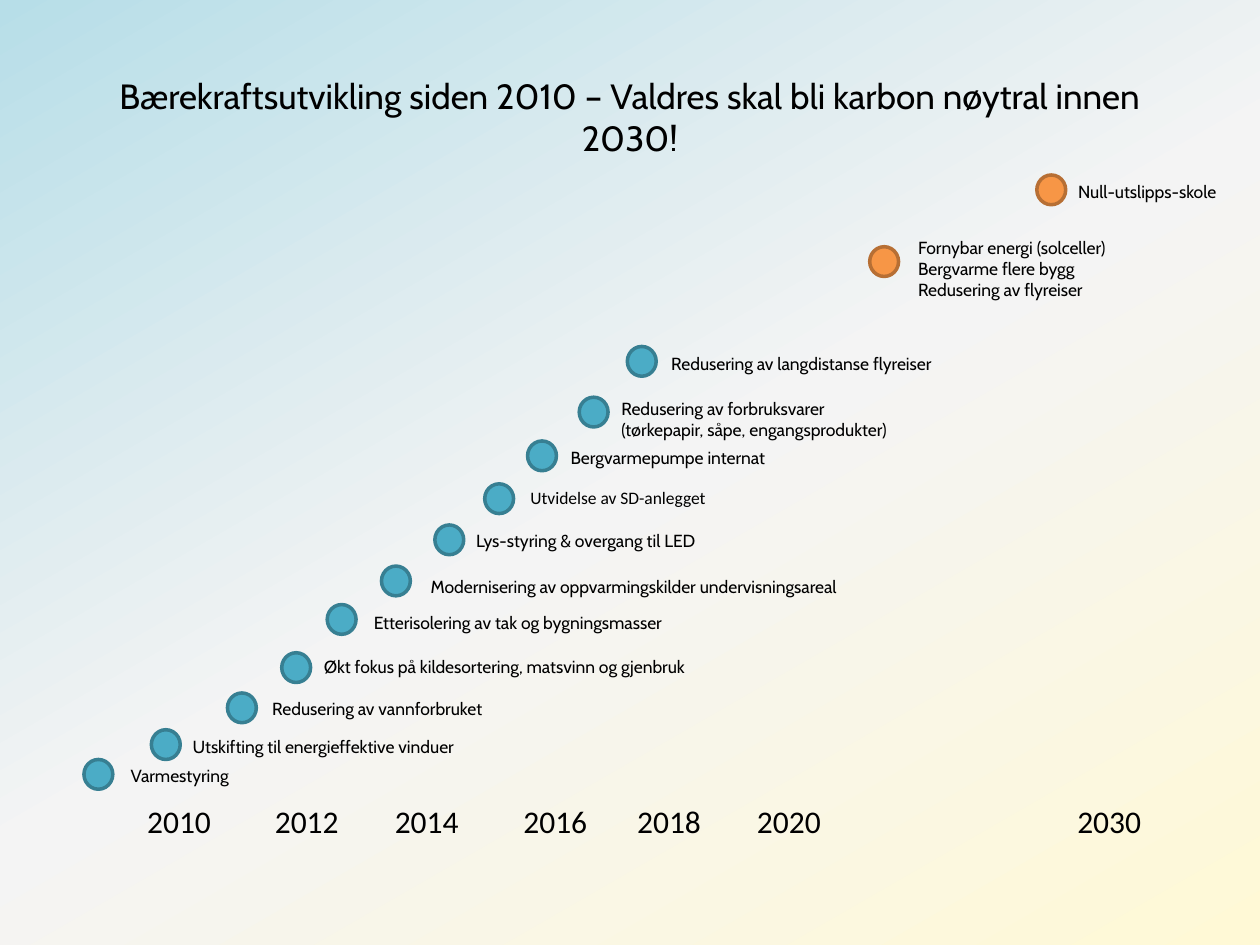
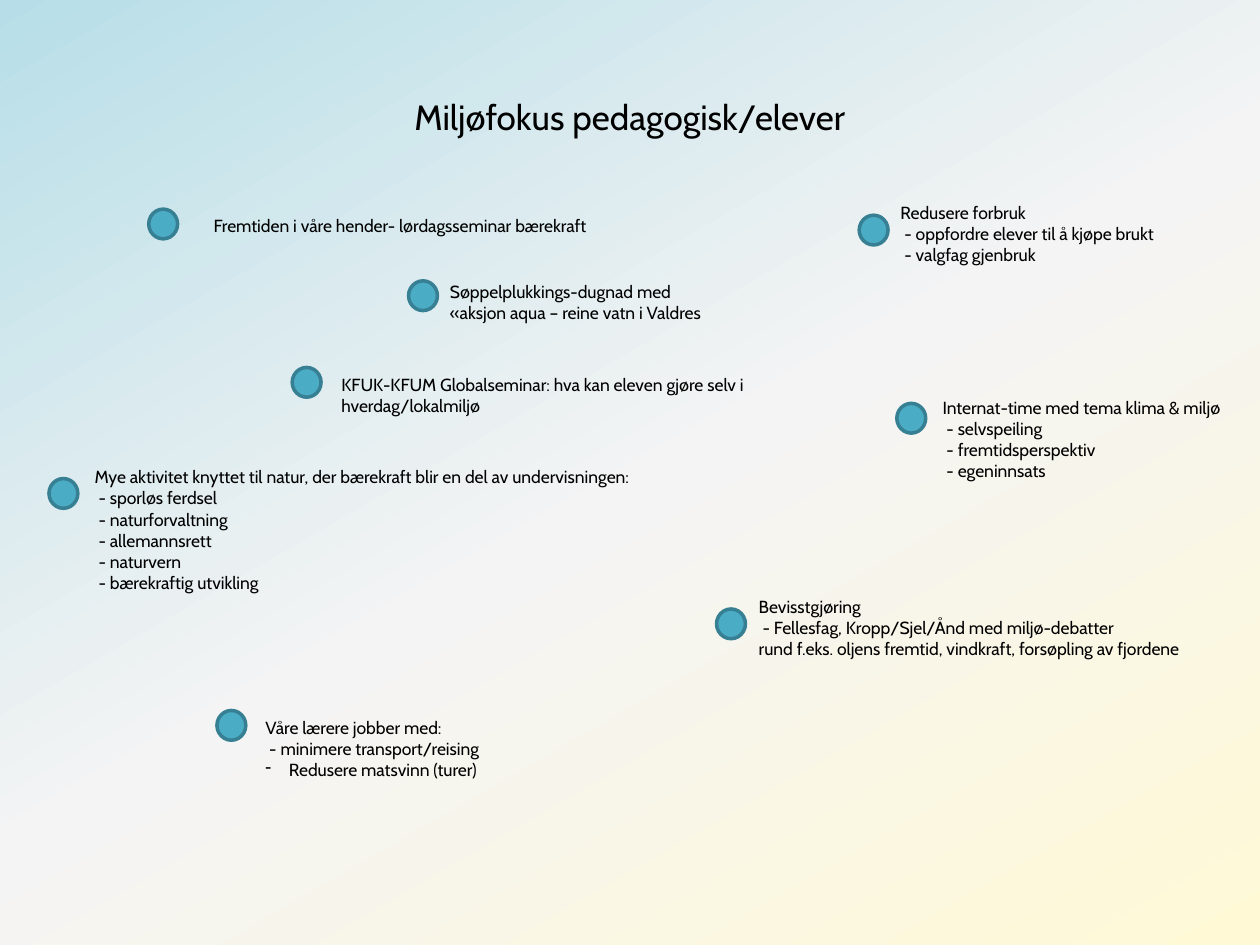
from pptx import Presentation
from pptx.dml.color import RGBColor as RGB
from pptx.enum.shapes import MSO_SHAPE as SHAPE
from pptx.enum.text import MSO_ANCHOR as ANCHOR, MSO_AUTO_SIZE as FIT, PP_ALIGN as ALIGN
from pptx.oxml import parse_xml
from pptx.oxml.ns import nsdecls
from pptx.util import Pt

COLORS = {
    "text": "000000",
    "done": "4BACC6", "done_line": "377F92",
    "plan": "F79646", "plan_line": "B76F34",
    "sky": "B7DEE8", "mist": "F4F4F4", "sun": "FFF9D6",
}
NS = nsdecls("a", "p")
DOT_W, DOT_H = 16.5, 17
LINE_H, PAD_H = 12.2, 29
YEAR_TABS = [73, 141.5, 215, 280, 348.5, 531.5]


def add_text(s, x, y, w, h, text, size=10, font="Cabin"):
    tf = s.shapes.add_textbox(Pt(x), Pt(y), Pt(w), Pt(h)).text_frame
    tf.word_wrap = False
    tf.auto_size = FIT.SHAPE_TO_FIT_TEXT
    tf.text = text
    for p in tf.paragraphs:
        p.font.size = Pt(size)
        p.font.name = font
        p.font.color.rgb = RGB.from_string(COLORS["text"])
    return tf


# Each item: dot x, dot y, text x, text y, text width, text, status
timeline = [
    (48, 434, 67.5, 433.5, 71, "Varmestyring", "done"),
    (86.5, 417, 103, 417, 168, "Utskifting til energieffektive vinduer", "done"),
    (130, 396, 148.5, 395.5, 138, "Redusering av vannforbruket", "done"),
    (161, 373, 178, 371.5, 227, "Økt fokus på kildesortering, matsvinn og gjenbruk", "done"),
    (187, 345.5, 206.5, 346, 184, "Etterisolering av tak og bygningsmasser", "done"),
    (218, 323.5, 239, 325.5, 250, "Modernisering av oppvarmingskilder undervisningsareal", "done"),
    (248.5, 300, 265, 299.5, 141, "Lys-styring & overgang til LED", "done"),
    (277, 276.5, 296, 275, 120, "Utvidelse av SD-anlegget", "done"),
    (301.5, 252, 319, 252, 127, "Bergvarmepumpe internat", "done"),
    (331, 227, 348, 224, 175, "Redusering av forbruksvarer\n(tørkepapir, såpe, engangsprodukter)", "done"),
    (358.5, 198, 376.5, 198, 166, "Redusering av langdistanse flyreiser", "done"),
    (497, 141, 517.5, 132, 126,
     "Fornybar energi (solceller)\nBergvarme flere bygg\nRedusering av flyreiser", "plan"),
    (592.5, 100, 609, 100, 94, "Null-utslipps-skole", "plan"),
]
activities = [
    (85, 119.5, 115, 119.5, 230, "Fremtiden i våre hender- lørdagsseminar bærekraft", "done"),
    (167, 210, 188, 210, 325,
     "KFUK-KFUM Globalseminar: hva kan eleven gjøre selv i\nhverdag/lokalmiljø", "done"),
    (233.5, 160.5, 250, 157, 159,
     "Søppelplukkings-dugnad med\n«aksjon aqua – reine vatn i Valdres", "done"),
    (512.5, 230.5, 531.5, 223.5, 173,
     "Internat-time med tema klima & miljø\n - selvspeiling\n - fremtidsperspektiv\n - egeninnsats", "done"),
    (28, 273.5, 47, 263, 328,
     "Mye aktivitet knyttet til natur, der bærekraft blir en del av undervisningen:\n"
     " - sporløs ferdsel\n - naturforvaltning\n - allemannsrett\n - naturvern\n - bærekraftig utvikling", "done"),
    (491, 123, 507.5, 112, 161,
     "Redusere forbruk\n - oppfordre elever til å kjøpe brukt\n - valgfag gjenbruk", "done"),
    (409.5, 348, 426.5, 337, 266,
     "Bevisstgjøring\n - Fellesfag, Kropp/Sjel/Ånd med miljø-debatter\n"
     "rund f.eks. oljens fremtid, vindkraft, forsøpling av fjordene", "done"),
    (124, 406, 144.5, 406, 140,
     "Våre lærere jobber med:\n - minimere transport/reising\nRedusere matsvinn (turer)", "done"),
]
pages = [
    ("Bærekraftsutvikling siden 2010 – Valdres skal bli karbon nøytral innen 2030!", timeline),
    ("Miljøfokus pedagogisk/elever", activities),
]

prs = Presentation()
prs.slide_width, prs.slide_height = Pt(720), Pt(540)

for title, items in pages:
    s = prs.slides.add_slide(prs.slide_layouts[6])
    stops = "".join(
        f'<a:gs pos="{pos * 1000}"><a:srgbClr val="{COLORS[name]}"/></a:gs>'
        for pos, name in [(0, "sky"), (51, "mist"), (100, "sun")])
    s.element.cSld.insert(0, parse_xml(
        f'<p:bg {NS}><p:bgPr><a:gradFill rotWithShape="1"><a:gsLst>{stops}</a:gsLst>'
        '<a:lin ang="3600000" scaled="0"/></a:gradFill><a:effectLst/></p:bgPr></p:bg>'))

    tf = add_text(s, 36, 21.5, 648, 90, title, size=20)
    tf.word_wrap = True
    tf.auto_size = FIT.NONE
    tf.vertical_anchor = ANCHOR.MIDDLE
    tf.paragraphs[0].alignment = ALIGN.CENTER

    for dot_x, dot_y, x, y, w, text, status in items:
        sp = s.shapes.add_shape(SHAPE.OVAL, Pt(dot_x), Pt(dot_y), Pt(DOT_W), Pt(DOT_H))
        sp.shadow.inherit = False
        sp.fill.solid()
        sp.fill.fore_color.rgb = RGB.from_string(COLORS[status])
        sp.line.color.rgb = RGB.from_string(COLORS[status + "_line"])
        sp.line.width = Pt(2)
        font = "Calibri" if text.startswith("Utvidelse") else "Cabin"
        h = PAD_H + LINE_H * len(text.split("\n"))
        tf = add_text(s, x, y, w, h, text, font=font)

    if items is timeline:
        years = add_text(s, 77, 454.5, 605.5, 29,
                         "2010\t2012\t2014\t2016\t2018\t2020\t2030", size=18, font="Calibri")
        tabs = "".join(f'<a:tab pos="{Pt(pos)}" algn="l"/>' for pos in YEAR_TABS)
        pPr = years.paragraphs[0]._p.get_or_add_pPr()
        pPr.insert(0, parse_xml(f"<a:tabLst {NS}>{tabs}</a:tabLst>"))
    else:
        pPr = tf.paragraphs[-1]._p.get_or_add_pPr()
        pPr.set("marL", str(Pt(13.5)))
        pPr.set("indent", str(-Pt(13.5)))
        pPr.insert(0, parse_xml(f'<a:buChar {NS} char="-"/>'))

prs.save("out.pptx")
